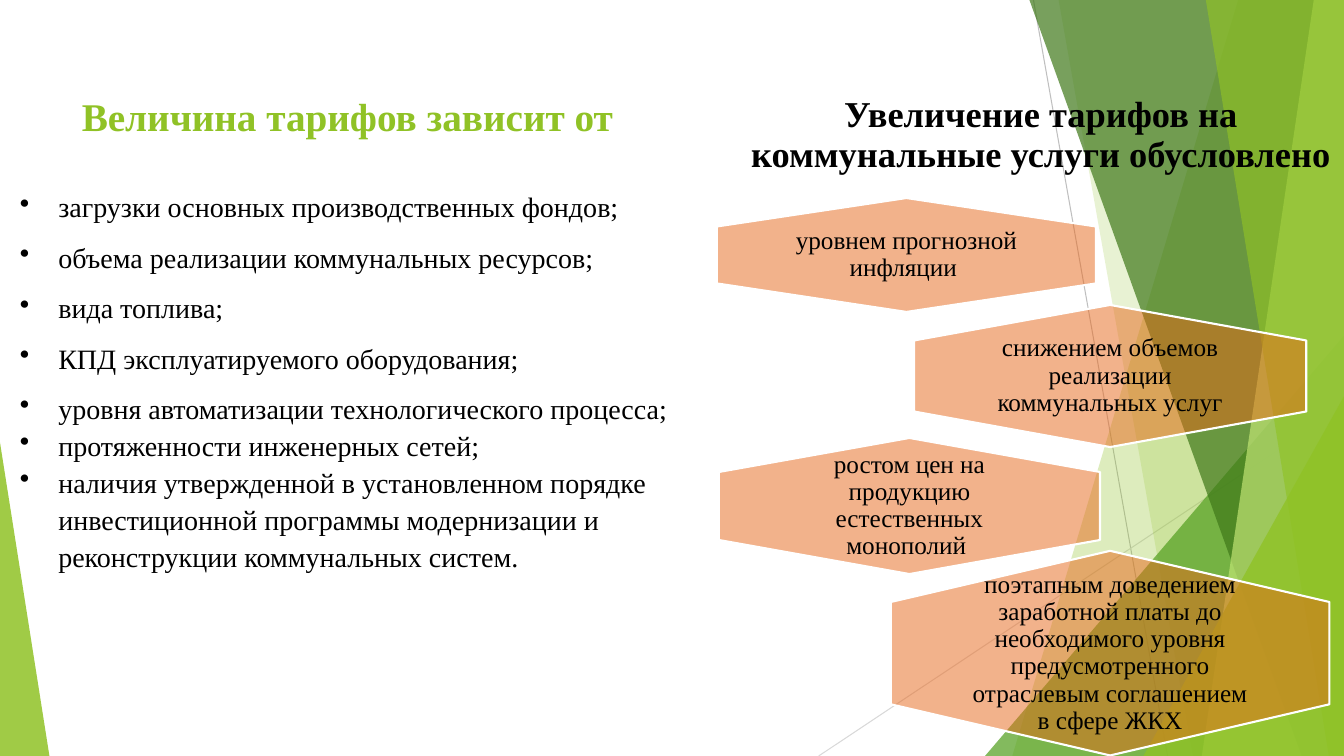
import pptx
import pptx.util
import pptx.dml.color
import pptx.enum.shapes
import pptx.enum.text
import pptx.oxml
import pptx.oxml.ns

Inches = pptx.util.Inches
Pt = pptx.util.Pt
SHAPE = pptx.enum.shapes.MSO_SHAPE
ALIGN = pptx.enum.text.PP_ALIGN
ANCHOR = pptx.enum.text.MSO_ANCHOR
qn = pptx.oxml.ns.qn

COLORS = {
    "lime": "90C226", "green": "54A021", "dark": "3F7819", "pale": "C0E474",
    "orange": "E76618", "white": "FFFFFF", "black": "000000",
    "gray": "BFBFBF", "light": "D9D9D9",
}
WIDTH, HEIGHT = 13.33, 7.5

LINES = [((10.25, 0), (11.58, HEIGHT), "gray"), ((WIDTH, 4.03), (8.12, HEIGHT), "light")]
BANDS = [
    (12.28, 10.04, "lime", 30),
    (10.5, 11.83, "lime", 20),
    (10.21, 12.91, "dark", 70),
    (13.03, 11.92, "pale", 70),
    (11.96, 13.18, "lime", 65),
]
TRIANGLES = [
    (9.77, 3.33, 3.56, 4.17, 1, "green", 72),
    (11.34, 3.93, 1.99, 3.57, 1, "lime", 80),
    (0, 4.39, 0.49, 3.11, 0, "lime", 85),
]
REASONS = [
    (9.02, 5.02, 3.78, 1.35, 0.07, "ростом цен на продукцию естественных монополий "),
    (11.01, 3.73, 3.89, 1.41, 0, "снижением объемов реализации коммунальных услуг"),
    (8.99, 2.53, 3.76, 1.13, 0.07, "уровнем прогнозной инфляции "),
    (11.01, 6.48, 4.35, 2.03, 0,
     "поэтапным доведением заработной платы до необходимого уровня "
     "предусмотренного отраслевым соглашением в сфере ЖКХ"),
]
FACTORS = [
    ("загрузки основных производственных фондов;", 1.5),
    ("объема реализации коммунальных ресурсов;", 1.5),
    ("вида топлива;", 1.5),
    ("КПД эксплуатируемого оборудования;", 1.5),
    ("уровня автоматизации технологического процесса;", 1.5),
    ("протяженности инженерных сетей;", 1.1),
    ("наличия утвержденной в установленном порядке инвестиционной программы "
     "модернизации и реконструкции коммунальных систем.", 1.1),
]


def rgb(name):
    return pptx.dml.color.RGBColor.from_string(COLORS[name])


def write(p, text, size=18, color="black", bold=False, align=ALIGN.CENTER,
          spacing=1.0, bullet=False, font="Times New Roman"):
    p.alignment = align
    p.line_spacing = spacing
    p.space_before = p.space_after = Pt(0)
    if bullet:
        pPr = p._p.get_or_add_pPr()
        pPr.set("marL", str(Inches(0.38)))
        pPr.set("indent", str(Inches(-0.38)))
        pptx.oxml.ns.qn
        bu = pptx.oxml.parse_xml(
            '<a:buChar %s char="•"/>' % pptx.oxml.ns.nsdecls("a"))
        pPr.append(bu)
    r = p.add_run()
    r.text = text
    r.font.name = font
    r.font.size = Pt(size)
    r.font.bold = bold
    r.font.color.rgb = rgb(color)


class Deck:
    def __init__(self):
        self.prs = pptx.Presentation()
        self.prs.slide_width = Inches(WIDTH)
        self.prs.slide_height = Inches(HEIGHT)
        self.s = self.prs.slides.add_slide(self.prs.slide_layouts[5])

    def paint(self, sp, color, alpha):
        sp.shadow.inherit = False
        sp.fill.solid()
        sp.fill.fore_color.rgb = rgb(color)
        clr = sp._element.spPr.find(".//" + qn("a:srgbClr"))
        clr.append(clr.makeelement(qn("a:alpha"), {"val": str(alpha * 1000)}))
        sp.line.fill.background()

    def line(self, start, end, color):
        sp = self.s.shapes.add_connector(
            pptx.enum.shapes.MSO_CONNECTOR.STRAIGHT, *map(Inches, start + end))
        sp.line.color.rgb = rgb(color)
        sp.line.width = Pt(0.75)
        spPr = sp._element.spPr
        spPr.append(spPr.makeelement(qn("a:effectLst"), {}))

    def band(self, top, bottom, color, alpha):
        fb = self.s.shapes.build_freeform(Inches(top), 0)
        corners = [(WIDTH, 0), (WIDTH, HEIGHT), (bottom, HEIGHT)]
        fb.add_line_segments([(Inches(x), Inches(y)) for x, y in corners])
        self.paint(fb.convert_to_shape(), color, alpha)

    def triangle(self, x, y, w, h, apex, color, alpha):
        sp = self.s.shapes.add_shape(SHAPE.ISOSCELES_TRIANGLE, *map(Inches, (x, y, w, h)))
        sp.adjustments[0] = apex
        self.paint(sp, color, alpha)

    def frame(self, sp, anchor, inset=None):
        tf = sp.text_frame
        tf.word_wrap = True
        tf.auto_size = pptx.enum.text.MSO_AUTO_SIZE.NONE
        tf.vertical_anchor = anchor
        if inset is not None:
            tf.margin_left = tf.margin_right = Inches(inset)
            tf.margin_top = tf.margin_bottom = Inches(inset)
        return tf

    def title(self, text, x, y, w, h, **fmt):
        sp = self.s.shapes.title
        sp.left, sp.top, sp.width, sp.height = map(Inches, (x, y, w, h))
        write(self.frame(sp, ANCHOR.TOP).paragraphs[0], text, **fmt)

    def text(self, items, x, y, w, h, inset=None, **fmt):
        sp = self.s.shapes.add_textbox(*map(Inches, (x, y, w, h)))
        tf = self.frame(sp, ANCHOR.MIDDLE, inset)
        for i, (text, spacing) in enumerate(items):
            p = tf.add_paragraph() if i else tf.paragraphs[0]
            write(p, text, spacing=spacing, **fmt)

    def hexagon(self, cx, cy, w, h, inset, text):
        sp = self.s.shapes.add_shape(
            SHAPE.HEXAGON, *map(Inches, (cx - h / 2, cy - w / 2, h, w)))
        sp.rotation = 90
        sp.adjustments[0] = 0.25
        self.paint(sp, "orange", 50)
        sp.line.color.rgb = rgb("white")
        sp.line.width = Pt(1.5)
        self.text([(text, 0.9)], cx - w / 3, cy - h / 3, w * 2 / 3, h * 2 / 3, inset)


def main():
    deck = Deck()
    for line in LINES:
        deck.line(*line)
    for band in BANDS[:2]:
        deck.band(*band)
    deck.triangle(*TRIANGLES[0])
    for band in BANDS[2:]:
        deck.band(*band)
    for triangle in TRIANGLES[1:]:
        deck.triangle(*triangle)
    for reason in REASONS:
        deck.hexagon(*reason)
    deck.text(FACTORS, 0.1, 0.77, 7.33, 5.86, size=20, align=ALIGN.LEFT, bullet=True)
    deck.title("Величина тарифов зависит от", 0, 0.87, 6.89, 0.66,
               size=28, color="lime", bold=True)
    deck.text([("Увеличение тарифов на коммунальные услуги обусловлено ", 0.9)],
              7.32, 0.67, 6.01, 1.35, size=26, bold=True)
    deck.prs.save("out.pptx")


if __name__ == "__main__":
    main()
